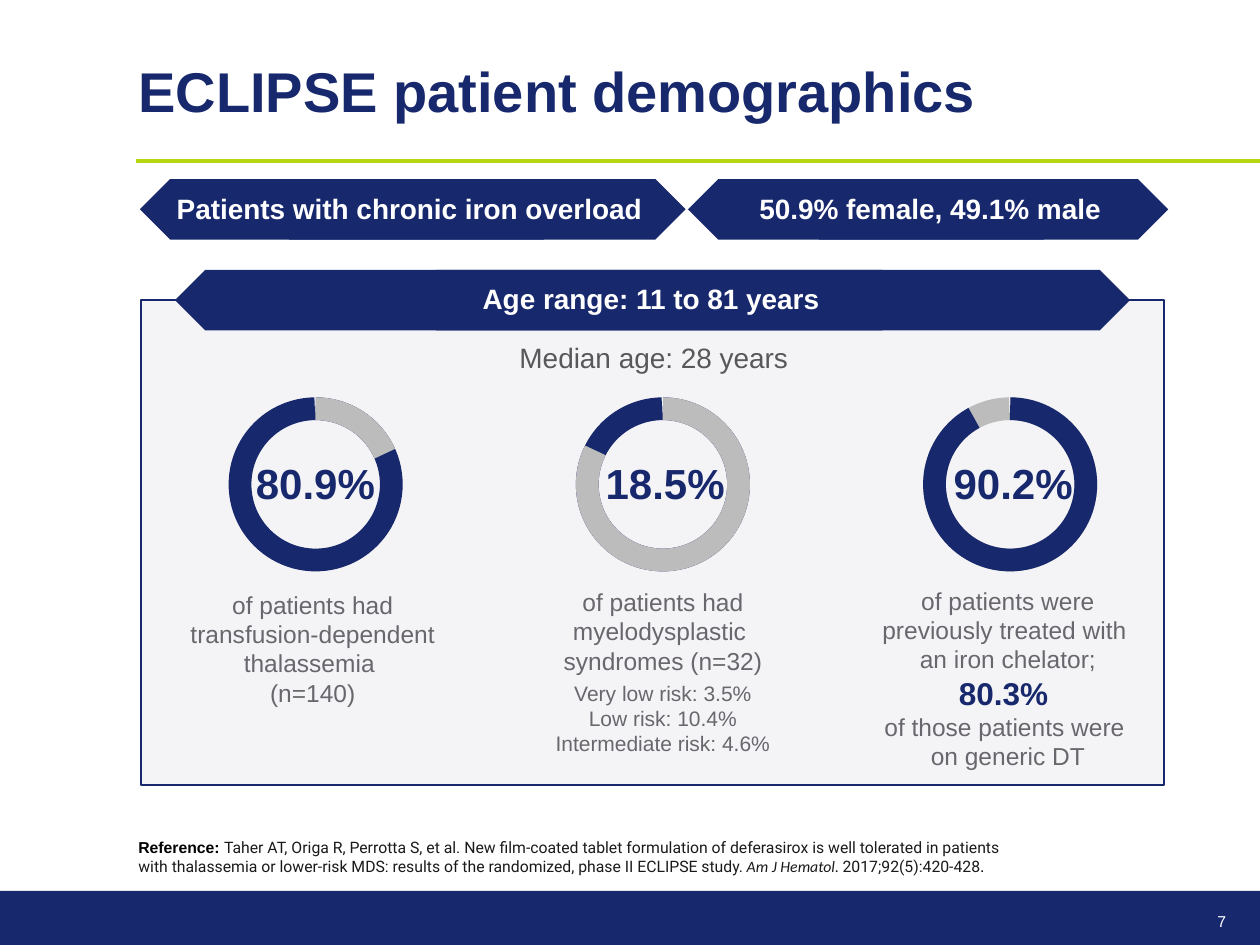
import copy
from dataclasses import dataclass

import pptx
import pptx.util
import pptx.dml.color
import pptx.enum.shapes
import pptx.enum.text
import pptx.oxml.ns

Cm = pptx.util.Cm
Pt = pptx.util.Pt
Kind = pptx.enum.shapes.MSO_SHAPE
Align = pptx.enum.text.PP_ALIGN
qn = pptx.oxml.ns.qn


@dataclass(frozen=True)
class Theme:
    navy: str = "17286D"
    lime: str = "B8D511"
    gray: str = "BCBCBD"
    panel: str = "F4F3F6"
    body: str = "69676D"
    dark: str = "585859"
    ink: str = "1A1A1A"
    black: str = "000000"
    white: str = "FFFFFF"
    font: str = "Arial"
    title: int = 32
    figure: int = 24
    accent: int = 18
    head: int = 16
    text: int = 14
    small: int = 12
    note: int = 9


@dataclass
class Run:
    text: str
    size: int
    color: str
    bold: bool = False
    italic: bool = False
    font: str = Theme.font


def rgb(color):
    return pptx.dml.color.RGBColor.from_string(color)


class Deck:
    """Holds the theme and the current slide."""

    def __init__(self, theme):
        self.theme = theme
        self.file = pptx.Presentation()
        self.file.slide_width, self.file.slide_height = Cm(25.4), Cm(19.05)
        self.slide = self.file.slides.add_slide(self.file.slide_layouts[6])

    def shape(self, kind, box, fill=None, line=None, width=1):
        item = self.slide.shapes.add_shape(kind, *map(Cm, box))
        item.shadow.inherit = False
        if fill:
            item.fill.solid()
            item.fill.fore_color.rgb = rgb(fill)
        else:
            item.fill.background()
        if line:
            item.line.color.rgb = rgb(line)
            item.line.width = Pt(width)
        else:
            item.line.fill.background()
        return item

    def rule(self, left, right, y, color, width):
        item = self.slide.shapes.add_connector(
            pptx.enum.shapes.MSO_CONNECTOR.STRAIGHT, Cm(left), Cm(y), Cm(right), Cm(y))
        item.line.color.rgb = rgb(color)
        item.line.width = Pt(width)
        item._element.spPr.append(pptx.oxml.parse_xml(
            f"<a:effectLst {pptx.oxml.ns.nsdecls('a')}/>"))

    def text(self, box, paras, align=Align.CENTER, wrap=True, lines=None, after=0):
        """Write paragraphs, each a list of runs; after is the gap between them."""
        frame = self.slide.shapes.add_textbox(*map(Cm, box)).text_frame
        frame.word_wrap = wrap
        for at, runs in enumerate(paras):
            para = frame.paragraphs[0] if at == 0 else frame.add_paragraph()
            para.alignment = align
            if lines:
                para.line_spacing = lines
            if after and at < len(paras) - 1:
                para.space_after = Pt(after)
            if len(runs) == 1:
                para.text = runs[0].text
                for part in para.runs:
                    self.style(part, runs[0])
                for gap in para._p.findall(qn("a:br")):
                    gap.append(copy.deepcopy(para.runs[0]._r.rPr))
            else:
                for run in runs:
                    part = para.add_run()
                    part.text = run.text
                    self.style(part, run)
        return frame

    def style(self, part, run):
        font = part.font
        font.name, font.size = run.font, Pt(run.size)
        font.bold, font.italic = run.bold, run.italic
        font.color.rgb = rgb(run.color)

    def banner(self, left, width, top, label, inner):
        """Draw a double-ended arrow from two overlapping plates, with its label."""
        t = self.theme
        right = 0.727 * width
        self.shape(Kind.PENTAGON, (left + width - right, top, right, 1.22), t.navy)
        self.shape(Kind.PENTAGON, (left, top, 0.741 * width, 1.22), t.navy).rotation = 180
        self.text((inner[0], top + 0.17, inner[1], 1.14),
                  [[Run(label, t.head, t.white, True)]], lines=0.95)

    def ring(self, left, top, base, over, end):
        """Draw a full ring and, over it, an arc from the top to the end angle."""
        for color, angle in ((base, 269.4), (over, end)):
            arc = self.shape(Kind.ARC, (left, top, 3.05, 3.05), line=color, width=13)
            arc.adjustments[0] = 270 * 0.6
            arc.adjustments[1] = angle * 0.6


def main():
    t = Theme()
    deck = Deck(t)
    deck.shape(Kind.RECTANGLE, (0, 17.96, 25.4, 1.09), t.navy)
    deck.rule(2.74, 25.4, 3.25, t.lime, 2.25)

    title = deck.text((2.54, 1.09, 23.11, 1.57),
                      [[Run("ECLIPSE patient demographics", t.title, t.navy, True)]],
                      Align.LEFT, lines=0.75)
    title.margin_top = Cm(0.36)

    deck.banner(2.82, 11, 3.61, "Patients with chronic iron overload", (3.15, 10.21))
    deck.banner(13.87, 9.68, 3.61, "50.9% female, 49.1% male", (14.38, 8.74))
    deck.shape(Kind.RECTANGLE, (2.84, 6.05, 20.62, 9.78), t.panel, t.navy)
    deck.banner(3.53, 19.25, 5.44, "Age range: 11 to 81 years", (2.84, 20.57))
    deck.text((2.84, 6.78, 20.68, 1.14),
              [[Run("Median age: 28 years", t.head, t.dark)]], lines=0.95)

    def body(words, size=t.text):
        return [Run(words, size, t.body)]

    stats = [
        ("80.9%", (4.8, 3.12), (t.navy, t.gray, 336.1), (3.51, 11.76, 5.59, 2.64), 0,
         [body("of patients had transfusion-dependent thalassemia "), body("(n=140)")]),
        ("18.5%", (11.91, 3), (t.navy, t.gray, 206.7), (10.52, 11.71, 5.69, 3.81), 3,
         [body("of patients had myelodysplastic \vsyndromes (n=32)"),
          body("Very low risk: 3.5%\vLow risk: 10.4%\vIntermediate risk: 4.6%", t.small)]),
        ("90.2%", (18.95, 2.95), (t.gray, t.navy, 241.5), (17.22, 11.68, 6.2, 5.21), 0,
         [body("of patients were previously treated with \van iron chelator;"),
          [Run("80.3% ", t.accent, t.navy, True)],
          body("of those patients were \von generic DT")]),
    ]
    for at, (value, (left, width), arcs, box, after, paras) in enumerate(stats):
        deck.ring(4.84 + 7 * at, 8.24, *arcs)
        deck.text((left, 9.09, width, 1.27),
                  [[Run(value, t.figure, t.navy, True)]])
        deck.text(box, paras, after=after)

    deck.text((2.54, 16.76, 18.49, 0.71), [[
        Run("Reference: ", t.note, t.black, True),
        Run("Taher AT, Origa R, Perrotta S, et al. New film-coated tablet formulation of "
            "deferasirox is well tolerated in patients with thalassemia or lower-risk MDS: "
            "results of the randomized, phase II ECLIPSE study. ",
            t.note, t.ink, font="Roboto"),
        Run("Am J Hematol. ", t.note, t.ink, italic=True, font="Calibri"),
        Run("2017;92(5):420-428", t.note, t.ink, font="Roboto"),
        Run(".", t.note, t.black),
    ]], Align.LEFT)
    deck.text((23.85, 18.26, 1.12, 0.69), [[Run("7", t.note, t.white)]], Align.RIGHT)
    deck.file.save("out.pptx")


if __name__ == "__main__":
    main()
